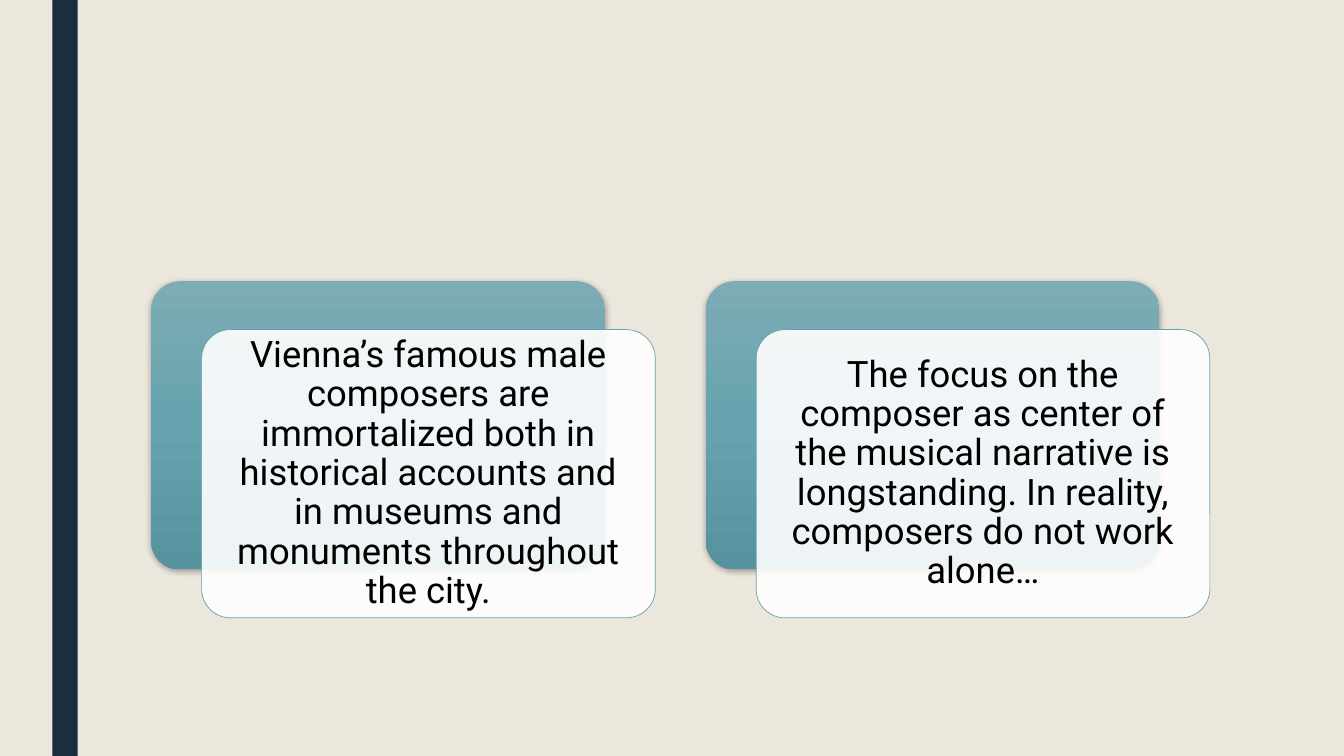
from dataclasses import dataclass

from lxml import etree
from pptx import Presentation
from pptx import util as u
from pptx.dml.color import RGBColor
from pptx.enum import shapes, text
from pptx.oxml.ns import qn


@dataclass(frozen=True)
class Theme:
    background: str = "EBE7DD"
    stripe: str = "1A2E40"
    backing: tuple = ((0, "7DACB5"), (50, "66A3AE"), (100, "57939E"))
    panel: str = "FFFFFF"
    outline: str = "69A1AB"
    ink: str = "000000"
    shadow: str = "000000"
    font: str = "Roboto"
    body_size: int = 26


THEME = Theme()
WIDTH, HEIGHT = 13.33, 7.5
CARD_LEFT, CARD_TOP, CARD_PITCH = 1.5, 2.79, 5.5
CARD_WIDTH, CARD_HEIGHT = 5, 3.34
SHIFT_X, SHIFT_Y = 0.5, 0.48
STATEMENTS = (
    "Vienna’s famous male composers are immortalized both in historical "
    "accounts and in museums and monuments throughout the city.",
    "The focus on the composer as center of the musical narrative is "
    "longstanding. In reality, composers do not work alone…",
)


def child(parent, tag, **attributes):
    return etree.SubElement(parent, qn(tag), attributes)


def add_block(page, kind, left, top, width, height):
    block = page.shapes.add_shape(kind, *map(u.Inches, (left, top, width, height)))
    block.shadow.inherit = False
    block.line.fill.background()
    if kind == shapes.MSO_SHAPE.ROUNDED_RECTANGLE:
        block.adjustments[0] = 0.1
    return block


def fill_solid(fill, color, opacity=100):
    fill.solid()
    fill.fore_color.rgb = RGBColor.from_string(color)
    if opacity < 100:
        color_node = fill._xPr.find(".//" + qn("a:srgbClr"))
        child(color_node, "a:alpha", val=str(opacity * 1000))


def fill_downward(block, stops):
    block.fill.gradient()
    block.fill.gradient_angle = 270
    stop_list = block._element.spPr.find(".//" + qn("a:gsLst"))
    for old_stop in list(stop_list):
        stop_list.remove(old_stop)
    for position, color in stops:
        stop = child(stop_list, "a:gs", pos=str(position * 1000))
        child(stop, "a:srgbClr", val=color)


def cast_shadow(block, color, opacity, blur, distance):
    effects = block._element.spPr.find(qn("a:effectLst"))
    shadow = child(effects, "a:outerShdw", blurRad=str(u.Pt(blur)),
                   dist=str(u.Pt(distance)), dir="5400000", rotWithShape="0")
    color_node = child(shadow, "a:srgbClr", val=color)
    child(color_node, "a:alpha", val=str(opacity * 1000))


def write_text(shape, words, *, size, color, font, inset, line_spacing, space_after):
    frame = shape.text_frame
    frame.word_wrap = True
    frame.vertical_anchor = text.MSO_ANCHOR.MIDDLE
    frame.margin_left = frame.margin_right = u.Inches(inset)
    frame.margin_top = frame.margin_bottom = u.Inches(inset)
    para = frame.paragraphs[0]
    para.alignment = text.PP_ALIGN.CENTER
    para.line_spacing = line_spacing
    para.space_after = u.Pt(space_after)
    span = para.add_run()
    span.text = words
    span.font.size = u.Pt(size)
    span.font.name = font
    span.font.color.rgb = RGBColor.from_string(color)


def add_stripe(page, left, top, width, height):
    stripe = add_block(page, shapes.MSO_SHAPE.RECTANGLE, left, top, width, height)
    fill_solid(stripe.fill, THEME.stripe)


def add_card(page, words, left, top, width, height):
    """Place a shaded backing with a translucent text panel offset down and right."""
    size = width - SHIFT_X, height - SHIFT_Y
    rounded = shapes.MSO_SHAPE.ROUNDED_RECTANGLE

    backing = add_block(page, rounded, left, top, *size)
    fill_downward(backing, THEME.backing)
    cast_shadow(backing, THEME.shadow, opacity=35, blur=4.5, distance=1.5)

    panel = add_block(page, rounded, left + SHIFT_X, top + SHIFT_Y, *size)
    fill_solid(panel.fill, THEME.panel, opacity=90)
    fill_solid(panel.line.fill, THEME.outline)
    panel.line.width = u.Pt(0.5)
    write_text(panel, words, size=THEME.body_size, color=THEME.ink, font=THEME.font,
               inset=0.11, line_spacing=0.9, space_after=THEME.body_size * 0.35)


def main():
    deck = Presentation()
    deck.slide_width, deck.slide_height = u.Inches(WIDTH), u.Inches(HEIGHT)
    page = deck.slides.add_slide(deck.slide_layouts[6])
    fill_solid(page.background.fill, THEME.background)
    add_stripe(page, 0.52, 0, 0.25, HEIGHT)
    for column, words in enumerate(STATEMENTS):
        add_card(page, words, CARD_LEFT + column * CARD_PITCH, CARD_TOP,
                 CARD_WIDTH, CARD_HEIGHT)
    deck.save("out.pptx")


if __name__ == "__main__":
    main()
